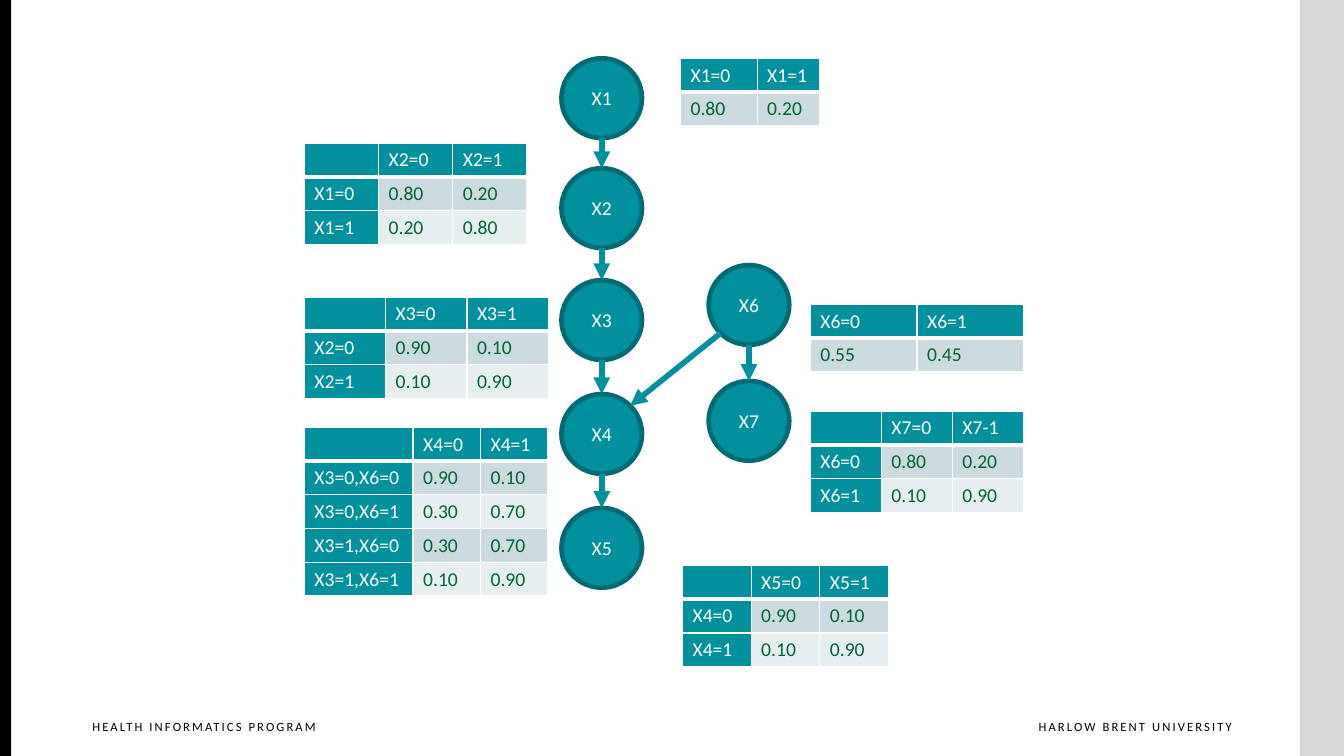
from math import cos, radians, sin

from lxml.etree import SubElement
from pptx import Presentation
from pptx.dml.color import RGBColor
from pptx.enum.shapes import MSO_CONNECTOR, MSO_SHAPE
from pptx.enum.text import MSO_ANCHOR, PP_ALIGN
from pptx.oxml.ns import qn
from pptx.util import Cm, Pt

TEAL = RGBColor(0x00, 0x90, 0x9E)
DARK_TEAL = RGBColor(0x00, 0x6B, 0x75)
GREEN = RGBColor(0x00, 0x66, 0x33)
BANDS = RGBColor(0xCC, 0xDB, 0xDF), RGBColor(0xE7, 0xEE, 0xF0)
WHITE = RGBColor(0xFF, 0xFF, 0xFF)
BLACK = RGBColor(0, 0, 0)
GREY = RGBColor(0xD9, 0xD9, 0xD9)

SLIDE_W, SLIDE_H = 33.87, 19.05
NODE_W, NODE_H = 2.03, 2.01
ROW_H = 0.85
NODES = {
    "X1": (14.15, 1.47), "X2": (14.15, 4.24), "X3": (14.15, 7.06),
    "X4": (14.15, 9.93), "X5": (14.15, 12.8),
    "X6": (17.86, 6.68), "X7": (17.86, 9.6),
}
EDGES = [("X1", "X2", 90), ("X2", "X3", 90), ("X3", "X4", 90),
         ("X4", "X5", 90), ("X6", "X4", 135), ("X6", "X7", 90)]
TABLES = [
    (17.15, 1.47, [1.93, 1.57], [["X1=0", "X1=1"], ["0.80", "0.20"]]),
    (20.42, 7.67, [2.69] * 2, [["X6=0", "X6=1"], ["0.55", "0.45"]]),
    (7.67, 3.61, [1.87] * 3, [["", "X2=0", "X2=1"],
                              ["X1=0", "0.80", "0.20"],
                              ["X1=1", "0.20", "0.80"]]),
    (17.2, 14.25, [1.73] * 3, [["", "X5=0", "X5=1"],
                               ["X4=0", "0.90", "0.10"],
                               ["X4=1", "0.10", "0.90"]]),
    (20.42, 10.36, [1.79] * 3, [["", "X7=0", "X7-1"],
                                ["X6=0", "0.80", "0.20"],
                                ["X6=1", "0.10", "0.90"]]),
    (7.67, 7.49, [2.05] * 3, [["", "X3=0", "X3=1"],
                              ["X2=0", "0.90", "0.10"],
                              ["X2=1", "0.10", "0.90"]]),
    (7.67, 10.77, [2.74, 1.7, 1.7], [["", "X4=0", "X4=1"],
                                     ["X3=0,X6=0", "0.90", "0.10"],
                                     ["X3=0,X6=1", "0.30", "0.70"],
                                     ["X3=1,X6=0", "0.30", "0.70"],
                                     ["X3=1,X6=1", "0.10", "0.90"]]),
]


def set_attrs(obj, values):
    """Set each named attribute of an object."""
    for name, value in values.items():
        setattr(obj, name, value)


def add_run(p, text, size, color):
    """Add a formatted run to a paragraph."""
    r = p.add_run()
    r.text = text
    set_attrs(r.font, {"name": "Calibri", "size": Pt(size), "bold": False})
    r.font.color.rgb = color
    return r


def add_filled(s, kind, x, y, w, h, color):
    """Add a filled shape without shadow or outline."""
    sp = s.shapes.add_shape(kind, Cm(x), Cm(y), Cm(w), Cm(h))
    sp.shadow.inherit = False
    sp.fill.solid()
    sp.fill.fore_color.rgb = color
    sp.line.fill.background()
    return sp


def add_footer(s, text, x, y, w, h, align):
    """Add a letter-spaced footer line in its box."""
    tf = s.shapes.add_textbox(Cm(x), Cm(y), Cm(w), Cm(h)).text_frame
    set_attrs(tf, {"word_wrap": True, "margin_right": 0})
    p = tf.paragraphs[0]
    p.alignment = align
    r = add_run(p, text, 9, BLACK)
    r._r.get_or_add_rPr().set("spc", "150")


def add_frame(s, w, h):
    """Add the side bars and footers of a slide of the given size."""
    add_filled(s, MSO_SHAPE.RECTANGLE, w - 1.12, 0, 1.12, h, GREY)
    add_filled(s, MSO_SHAPE.RECTANGLE, 0, 0, 0.28, h, BLACK)
    add_footer(s, "HARLOW BRENT UNIVERSITY", w - 8.8, h - 1.07, 5.97, 0.84,
               PP_ALIGN.RIGHT)
    add_footer(s, "HEALTH INFORMATICS PROGRAM", 2.08, h - 1.07, 6.45, 0.84,
               PP_ALIGN.LEFT)


def add_node(s, name, x, y):
    """Add one variable of the network."""
    sp = add_filled(s, MSO_SHAPE.OVAL, x, y, NODE_W, NODE_H, TEAL)
    sp.line.color.rgb = DARK_TEAL
    sp.line.width = Pt(3.35)
    tf = sp.text_frame
    tf.vertical_anchor = MSO_ANCHOR.MIDDLE
    p = tf.paragraphs[0]
    p.alignment = PP_ALIGN.CENTER
    add_run(p, name, 14, WHITE)


def rim_point(name, angle):
    """Return the point on a node's rim at a clockwise angle from the right."""
    x, y = NODES[name]
    a = radians(angle)
    return (Cm(x + NODE_W / 2 * (1 + cos(a))),
            Cm(y + NODE_H / 2 * (1 + sin(a))))


def add_edge(s, parent, child, angle):
    """Add an arrow from a parent's rim to the opposite rim of its child."""
    cx = s.shapes.add_connector(MSO_CONNECTOR.STRAIGHT,
                                *rim_point(parent, angle),
                                *rim_point(child, angle + 180))
    cx.line.color.rgb = TEAL
    cx.line.width = Pt(4)
    SubElement(cx.line._get_or_add_ln(), qn("a:tailEnd"), type="triangle")
    SubElement(cx._element.spPr, qn("a:effectLst"))


def add_borders(cell, row):
    """Add white cell borders, thick under the header row."""
    tcPr = cell._tc.get_or_add_tcPr()
    widths = {"L": 1, "R": 1, "T": 3 if row == 1 else 1,
              "B": 3 if row == 0 else 1}
    for side, width in widths.items():
        ln = SubElement(tcPr, qn(f"a:ln{side}"), w=str(Pt(width)))
        fill = SubElement(ln, qn("a:solidFill"))
        SubElement(fill, qn("a:srgbClr"), val=str(WHITE))


def add_probabilities(s, x, y, widths, rows):
    """Add a probability table with its top left corner at x, y."""
    tbl = s.shapes.add_table(len(rows), len(widths), Cm(x), Cm(y),
                             Cm(sum(widths)), Cm(ROW_H * len(rows))).table
    for col, width in zip(tbl.columns, widths):
        col.width = Cm(width)
    for i, values in enumerate(rows):
        tbl.rows[i].height = Cm(ROW_H)
        for j, text in enumerate(values):
            cell = tbl.cell(i, j)
            head = i == 0 or (j == 0 and not rows[0][0])
            add_borders(cell, i)
            cell.fill.solid()
            cell.fill.fore_color.rgb = TEAL if head else BANDS[(i - 1) % 2]
            p = cell.text_frame.paragraphs[0]
            if text:
                add_run(p, text, 14, WHITE if head else GREEN)
            else:
                SubElement(p._p, qn("a:endParaRPr"), sz="1400")


def add_network(s):
    """Add the nodes, arrows and probability tables."""
    for name, place in NODES.items():
        add_node(s, name, *place)
    for edge in EDGES:
        add_edge(s, *edge)
    for table in TABLES:
        add_probabilities(s, *table)


def main():
    """Build and save the slide."""
    prs = Presentation()
    set_attrs(prs, {"slide_width": Cm(SLIDE_W), "slide_height": Cm(SLIDE_H)})
    s = prs.slides.add_slide(prs.slide_layouts[6])
    add_frame(s, SLIDE_W, SLIDE_H)
    add_network(s)
    prs.save("out.pptx")


if __name__ == "__main__":
    main()
